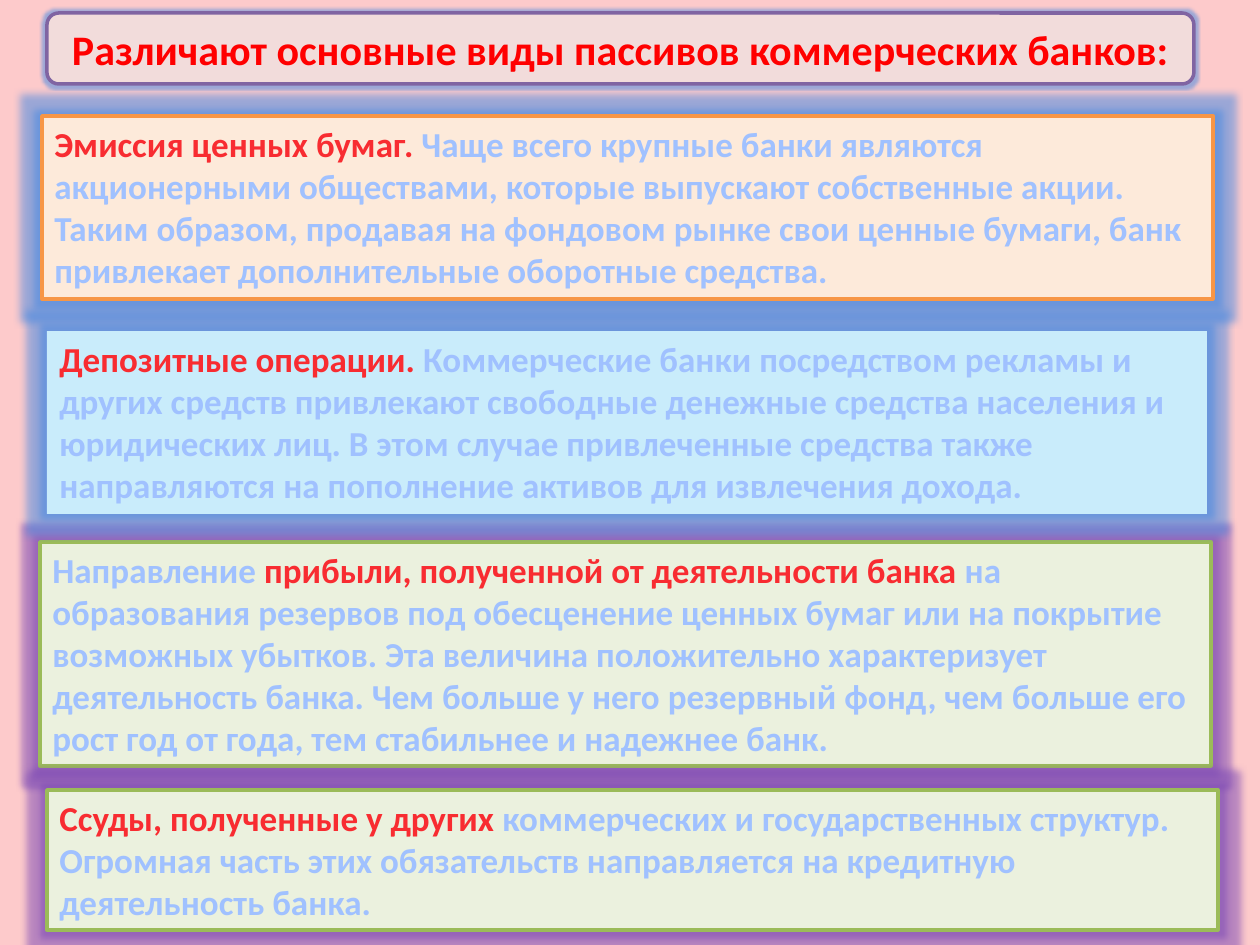
from dataclasses import dataclass

import pptx
import pptx.dml.color
import pptx.enum.shapes
import pptx.enum.text
import pptx.oxml
import pptx.oxml.ns
import pptx.util

PX = 914400 / 126  # EMU in one px
NS = pptx.oxml.ns.nsdecls("a")
RED, BLUE_GLOW, PURPLE_GLOW = "F82C31", "3A84E2", "7643B4"
GRADIENT = [(0, "BFD3F9"), (9, "A0C1FF"), (50, "003D85"), (79, "A0C1FF"), (100, "BFD3F9")]
TITLE_BOX = (47, 13, 1147, 71)


@dataclass
class Panel:
    box: tuple[int, int, int, int]  # left, top, width, height in px
    fill: str
    line: str | None
    glow: str
    runs: list[tuple[str, bool]]  # text, highlighted in red


PANELS = [
    Panel((42, 116, 1171, 183), "FDEADA", "F79646", BLUE_GLOW, [
        ("Эмиссия ценных бумаг. ", True),
        ("Чаще всего крупные банки являются акционерными обществами, которые выпускают "
         "собственные акции. Таким образом, продавая на фондовом рынке свои ценные бумаги, "
         "банк привлекает дополнительные оборотные средства.", False)]),
    Panel((40, 542, 1171, 224), "EBF1DE", "9BBB59", PURPLE_GLOW, [
        ("Направление ", False),
        ("прибыли, полученной от деятельности банка ", True),
        ("на образования резервов под обесценение ценных бумаг или на покрытие возможных "
         "убытков. Эта величина положительно характеризует деятельность банка. Чем больше у "
         "него резервный фонд, чем больше его рост год от года, тем стабильнее и надежнее "
         "банк.", False)]),
    Panel((47, 331, 1160, 183), "C9ECFB", None, BLUE_GLOW, [
        ("Депозитные операции. ", True),
        ("Коммерческие банки посредством рекламы и других средств привлекают свободные "
         "денежные средства населения и юридических лиц. В этом случае привлеченные средства "
         "также направляются на пополнение активов для извлечения дохода.", False)]),
    Panel((47, 790, 1171, 140), "EBF1DE", "9BBB59", PURPLE_GLOW, [
        ("Ссуды, полученные у других", True),
        (" коммерческих и государственных структур. Огромная часть этих обязательств "
         "направляется на кредитную деятельность банка.", False)]),
]


def px(n: int) -> int:
    return round(n * PX)


def rgb(color: str):
    return pptx.dml.color.RGBColor.from_string(color)


def xml(markup: str):
    return pptx.oxml.parse_xml(markup)


def add_run(p, text: str, *, size: int, outline: str, width: float, color: str | None = None):
    """Add a bold outlined run; without a color it gets the blue gradient."""
    r = p.add_run()
    r.text = text
    r.font.name, r.font.size, r.font.bold = "Calibri", pptx.util.Pt(size), True
    props = r.font._element
    if color:
        r.font.color.rgb = rgb(color)
    else:
        stops = "".join(f'<a:gs pos="{pos * 1000}"><a:srgbClr val="{c}"/></a:gs>'
                        for pos, c in GRADIENT)
        props.insert(0, xml(f'<a:gradFill {NS}><a:gsLst>{stops}</a:gsLst>'
                            '<a:lin ang="5400000" scaled="0"/></a:gradFill>'))
    props.insert(0, xml(f'<a:ln {NS} w="{round(width * 12700)}"><a:solidFill>'
                        f'<a:srgbClr val="{outline}"/></a:solidFill></a:ln>'))


def style_box(sp, *, fill: str, line: str | None, glow: str, radius: int):
    """Set fill, border and glow."""
    sp.fill.solid()
    sp.fill.fore_color.rgb = rgb(fill)
    if line:
        sp.line.color.rgb = rgb(line)
        sp.line.width = pptx.util.Pt(2)
    else:
        sp.line.fill.background()
    sp.shadow.inherit = False
    effects = sp._element.spPr.find(pptx.oxml.ns.qn("a:effectLst"))
    effects.append(xml(f'<a:glow {NS} rad="{radius * 12700}"><a:srgbClr val="{glow}">'
                       '<a:alpha val="50000"/></a:srgbClr></a:glow>'))


def draw_title(s, text: str):
    """Draw the rounded frame and lay the title placeholder over it."""
    frame = s.shapes.add_shape(pptx.enum.shapes.MSO_SHAPE.ROUNDED_RECTANGLE,
                               *map(px, TITLE_BOX))
    style_box(frame, fill="F2DCDB", line="8064A2", glow=BLUE_GLOW, radius=3)

    sp = s.shapes.title
    sp.left, sp.top, sp.width, sp.height = map(px, TITLE_BOX)
    frame._element.addnext(sp._element)
    tf = sp.text_frame
    tf.word_wrap = True
    tf.auto_size = pptx.enum.text.MSO_AUTO_SIZE.NONE
    tf.vertical_anchor = pptx.enum.text.MSO_ANCHOR.MIDDLE
    p = tf.paragraphs[0]
    p.alignment = pptx.enum.text.PP_ALIGN.CENTER
    add_run(p, text, size=24, color="FF0000", outline="C0504D", width=1.75)


def draw_panel(s, panel: Panel):
    sp = s.shapes.add_textbox(*map(px, panel.box))
    style_box(sp, fill=panel.fill, line=panel.line, glow=panel.glow, radius=8)
    tf = sp.text_frame
    tf.word_wrap = True
    tf.auto_size = pptx.enum.text.MSO_AUTO_SIZE.SHAPE_TO_FIT_TEXT
    for text, highlighted in panel.runs:
        add_run(tf.paragraphs[0], text, size=20, color=RED if highlighted else None,
                outline="467AB8", width=0.83)


def main():
    prs = pptx.Presentation()
    prs.slide_width, prs.slide_height = px(1260), px(945)
    s = prs.slides.add_slide(prs.slide_layouts[5])
    s.background.fill.solid()
    s.background.fill.fore_color.rgb = rgb("FDCACB")

    # Kinds of liabilities, then the heading on top
    for panel in PANELS:
        draw_panel(s, panel)
    draw_title(s, "Различают основные виды пассивов коммерческих банков:")
    prs.save("out.pptx")


if __name__ == "__main__":
    main()
